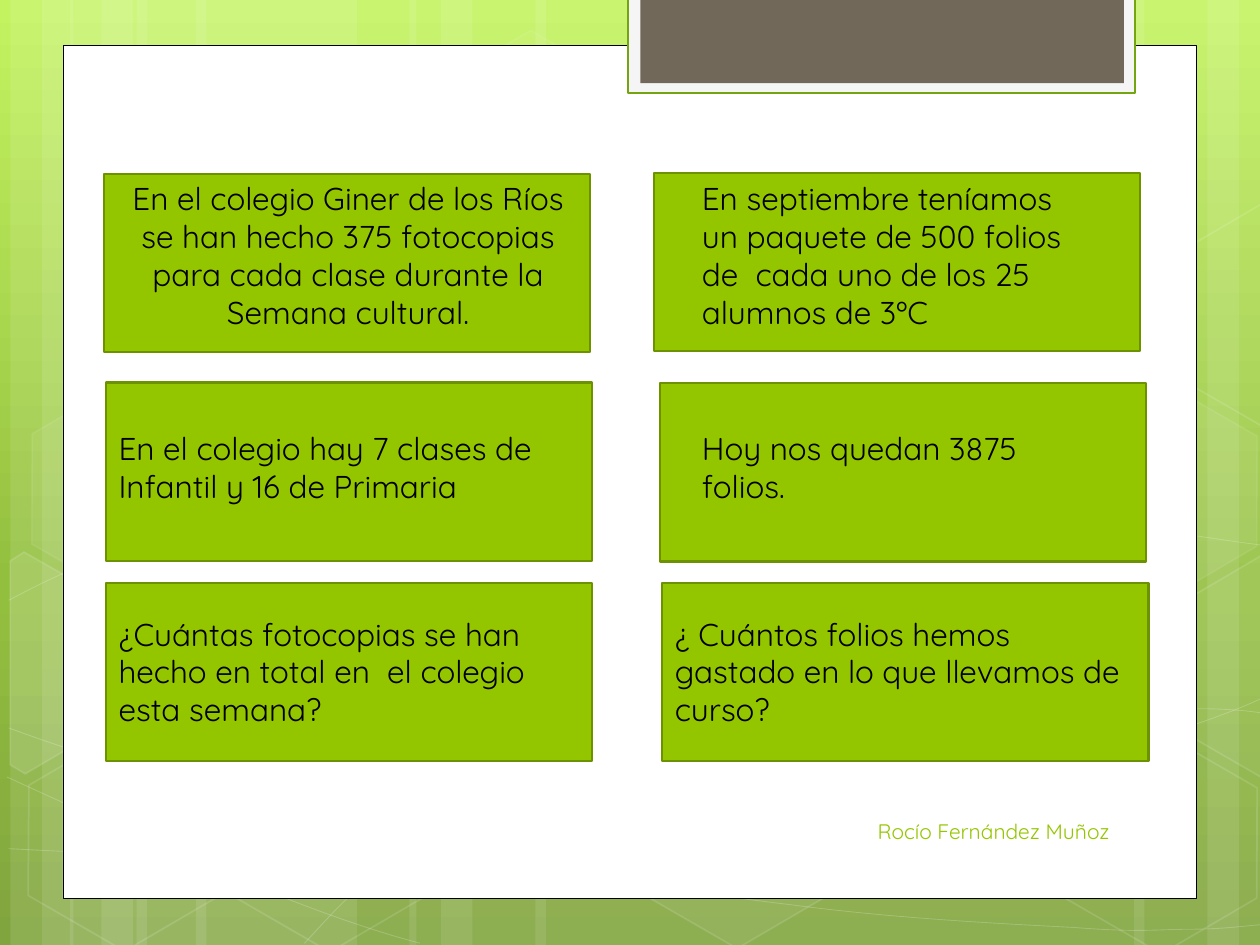
from copy import deepcopy
from dataclasses import dataclass
from math import cos, radians, sin

from lxml import etree
from pptx import Presentation
from pptx import util as u
from pptx.dml.color import RGBColor
from pptx.enum import shapes, text
from pptx.oxml.ns import qn


@dataclass(frozen=True)
class Theme:
    font: str = "Quicksand"
    body_size: float = 18
    footer_size: float = 12
    ink: str = "000000"
    white: str = "FFFFFF"
    green: str = "94C600"
    card_edge: str = "6D9200"
    tab: str = "F5F5F5"
    tab_edge: str = "74A510"
    brown: str = "71685A"
    gradient: tuple = ((0, "C3F35F"), (0.62, "93BF3F"), (1, "81A53E"))


def write(frame, content, *, font, size, color, align=text.PP_ALIGN.LEFT):
    paragraph = frame.paragraphs[0]
    paragraph.alignment = align
    run = paragraph.add_run()
    run.text = content
    run.font.name = font
    run.font.size = u.Pt(size)
    run.font.color.rgb = RGBColor.from_string(color)


def paint(fill, color, alpha=100):
    """Solid fill with an opacity in percent; no colour means no fill."""
    if color is None:
        fill.background()
        return
    fill.solid()
    fill.fore_color.rgb = RGBColor.from_string(color)
    if alpha < 100:
        solid = fill._xPr.find(qn("a:solidFill"))
        etree.SubElement(solid[0], qn("a:alpha"), val=str(alpha * 1000))


def turn(points, center, degrees):
    """Turn points clockwise around a center."""
    c, s = cos(radians(degrees)), sin(radians(degrees))
    cx, cy = center
    return [(cx + (x - cx) * c - (y - cy) * s, cy + (x - cx) * s + (y - cy) * c)
            for x, y in points]


class SlideBuilder:
    def __init__(self, slide, theme):
        self.slide = slide
        self.theme = theme

    def background(self):
        fill = self.slide.background.fill
        fill.gradient()
        fill.gradient_angle = 270
        stops = self.slide.element.find(".//" + qn("a:gsLst"))
        stops.append(deepcopy(stops[-1]))
        for stop, (position, color) in zip(fill.gradient_stops, self.theme.gradient):
            stop.position = position
            stop.color.rgb = RGBColor.from_string(color)

    def style(self, shape, fill, fill_alpha, line, width, line_alpha):
        shape.shadow.inherit = False
        paint(shape.fill, fill, fill_alpha)
        paint(shape.line.fill, line, line_alpha)
        if line:
            shape.line.width = u.Pt(width)

    def preset(self, kind, left, top, width, height, *, fill=None, fill_alpha=100,
               line=None, line_width=1, line_alpha=100):
        shape = self.slide.shapes.add_shape(
            kind, u.Pt(left), u.Pt(top), u.Pt(width), u.Pt(height))
        self.style(shape, fill, fill_alpha, line, line_width, line_alpha)
        return shape

    def box(self, *place, **look):
        return self.preset(shapes.MSO_SHAPE.RECTANGLE, *place, **look)

    def hexagon(self, left, top, fill_alpha, line_alpha):
        white = self.theme.white
        shape = self.preset(shapes.MSO_SHAPE.HEXAGON, left, top, 126, 109.5,
                            fill=white if fill_alpha else None, fill_alpha=fill_alpha,
                            line=white, line_alpha=line_alpha)
        shape.adjustments[0] = 0.285
        shape.rotation = 30

    def outline(self, points, *, close=False, fill_alpha=0, width=1, line_alpha=12):
        points = [(u.Pt(x), u.Pt(y)) for x, y in points]
        builder = self.slide.shapes.build_freeform(*points[0], scale=1)
        builder.add_line_segments(points[1:], close=close)
        shape = builder.convert_to_shape()
        white = self.theme.white
        self.style(shape, white if fill_alpha else None, fill_alpha,
                   white, width, line_alpha)
        return shape

    def curve(self, points):
        """Chain of cubic curves: a start, then three points for each curve."""
        shape = self.outline(points, width=0.5, line_alpha=20)
        steps = shape.element.findall(".//" + qn("a:lnTo"))
        for first, second, third in zip(*[iter(steps)] * 3):
            first.tag  # the three steps become one cubic step
            cubic = etree.Element(qn("a:cubicBezTo"))
            first.addprevious(cubic)
            for step in (first, second, third):
                cubic.append(step[0])
                step.getparent().remove(step)

    def cut_hexagon(self, points, center, fill_alpha):
        shape = self.outline(turn(points, center, -30), close=True, fill_alpha=fill_alpha)
        shape.rotation = 30

    def label(self, content, left, top, width, height, *, size, color,
              align=text.PP_ALIGN.LEFT, anchor=text.MSO_ANCHOR.TOP, grow=True):
        shape = self.slide.shapes.add_textbox(
            u.Pt(left), u.Pt(top), u.Pt(width), u.Pt(height))
        frame = shape.text_frame
        frame.word_wrap = True
        frame.vertical_anchor = anchor
        if grow:
            frame.auto_size = text.MSO_AUTO_SIZE.SHAPE_TO_FIT_TEXT
        write(frame, content, font=self.theme.font, size=size, color=color, align=align)

    def card(self, left, top):
        self.box(left, top, 277.8, 101.9, fill=self.theme.green,
                 line=self.theme.card_edge, line_width=1.25)


# Translucent vertical bars: left, width
BARS = [(78, 126), (6, 36), (24, 60), (112, 126), (40, 36), (58, 60),
        (528, 126), (690, 36), (648, 60), (306, 222), (234, 36), (252, 60)]

# Sweeping curves: start, then three points for each cubic
CURVES = [
    [(5, 485), (44, 487), (83, 489), (137, 488), (191, 487), (258, 486), (330, 479),
     (402, 472), (504, 458), (570, 444), (636, 431), (703, 409), (725, 397)],
    [(5, 343), (26, 332), (47, 321), (87, 310), (128, 299), (186, 284), (250, 279),
     (314, 274), (392, 273), (471, 279), (550, 284), (682, 307), (725, 312)],
    [(4, 444), (91, 484), (178, 523), (240, 539)],
    [(5, 416), (27, 424), (50, 432), (92, 444), (134, 454), (197, 472), (257, 485),
     (317, 497), (392, 510), (452, 517), (512, 525), (576, 528), (614, 530),
     (652, 533), (662, 531), (680, 531), (699, 531), (712, 529), (725, 528)],
    [(174, 539), (187, 525), (200, 510), (217, 498), (235, 485), (259, 470), (279, 460),
     (300, 450), (312, 446), (338, 438), (364, 431), (413, 421), (438, 416),
     (464, 411), (467, 411), (490, 410), (512, 408), (547, 405), (572, 405),
     (597, 404), (638, 405), (638, 405), (654, 405), (670, 405), (686, 405),
     (699, 405), (711, 406), (718, 407), (724, 408), (722, 407), (724, 408)],
]

# Hexagons: left, top, fill opacity, line opacity
HEXAGONS = [(240.5, 26, 4, 8), (358, 424, 6, 12), (8, 425.5, 0, 12), (10, 224.6, 7, 8),
            (125.3, 426, 0, 12), (542, 326, 10, 12), (600.5, 427, 0, 12),
            (600.5, 226, 7, 8)]
LEFT_CUT = [(5.8, 320.4), (13.7, 315.4), (69.1, 347), (68.4, 410.4), (14.4, 442.1),
            (5.8, 437)]
RIGHT_CUT = [(666.7, 349.2), (720.7, 317.5), (726.5, 321.1), (726.5, 441.4),
             (721.4, 444.2), (666.7, 412.6)]

# Problem cards: card left and top, text place, alignment, wording
LEFT, CENTER = text.PP_ALIGN.LEFT, text.PP_ALIGN.CENTER
CARDS = [
    ((59.5, 99.5), (60.7, 98.9, 276.5, 94.5), CENTER,
     "En el colegio Giner de los Ríos se han hecho 375 fotocopias para cada clase "
     "durante la Semana cultural."),
    ((373.7, 98.8), (394, 98.9, 238.3, 94.5), LEFT,
     "En septiembre teníamos un paquete de 500 folios de  cada uno de los 25 "
     "alumnos de 3ºC"),
    ((60.6, 218.6), (60.7, 241.8, 276.5, 51), LEFT,
     "En el colegio hay 7 clases de Infantil y 16 de Primaria"),
    ((377.2, 219), (394, 241.8, 238.3, 51), LEFT, "Hoy nos quedan 3875 folios."),
    ((60.6, 333.2), (60.7, 347.6, 276.5, 72.7), LEFT,
     "¿Cuántas fotocopias se han hecho en total en  el colegio esta semana?"),
    ((378.5, 333.2), (378.5, 347.6, 278, 72.7), LEFT,
     "¿ Cuántos folios hemos gastado en lo que llevamos de curso?"),
]


def main():
    presentation = Presentation()
    presentation.slide_width, presentation.slide_height = u.Pt(720), u.Pt(540)
    theme = Theme()
    # The slide has no title, so it uses the blank layout
    page = SlideBuilder(presentation.slides.add_slide(presentation.slide_layouts[6]), theme)

    # Backdrop
    page.background()
    for left, width in BARS:
        page.box(left, 0, width, 540, fill=theme.white, fill_alpha=10)
    for points in CURVES:
        page.curve(points)
    for hexagon in HEXAGONS:
        page.hexagon(*hexagon)
    page.cut_hexagon(LEFT_CUT, (25.9, 385.2), 10)
    for shift, alpha in ((0, 4), (-200.9, 0)):
        page.cut_hexagon([(x, y + shift) for x, y in RIGHT_CUT], (709.2, 374.4 + shift), alpha)

    # White sheet and top tab
    page.box(36, 26, 648, 487.3, fill=theme.white, line=theme.ink, line_width=0.5)
    page.box(359, -1.5, 289.7, 54.7, fill=theme.tab, line=theme.tab_edge, line_width=1.25)
    page.box(366, -1.5, 276.2, 49, fill=theme.brown)

    # Problem cards
    for corner, place, align, wording in CARDS:
        page.card(*corner)
        page.label(wording, *place, size=theme.body_size, color=theme.ink, align=align)

    # Author
    page.label("Rocío Fernández Muñoz", 365.7, 460.8, 275.5, 28.8, size=theme.footer_size,
               color=theme.green, align=text.PP_ALIGN.RIGHT,
               anchor=text.MSO_ANCHOR.MIDDLE, grow=False)

    presentation.save("out.pptx")


if __name__ == "__main__":
    main()
